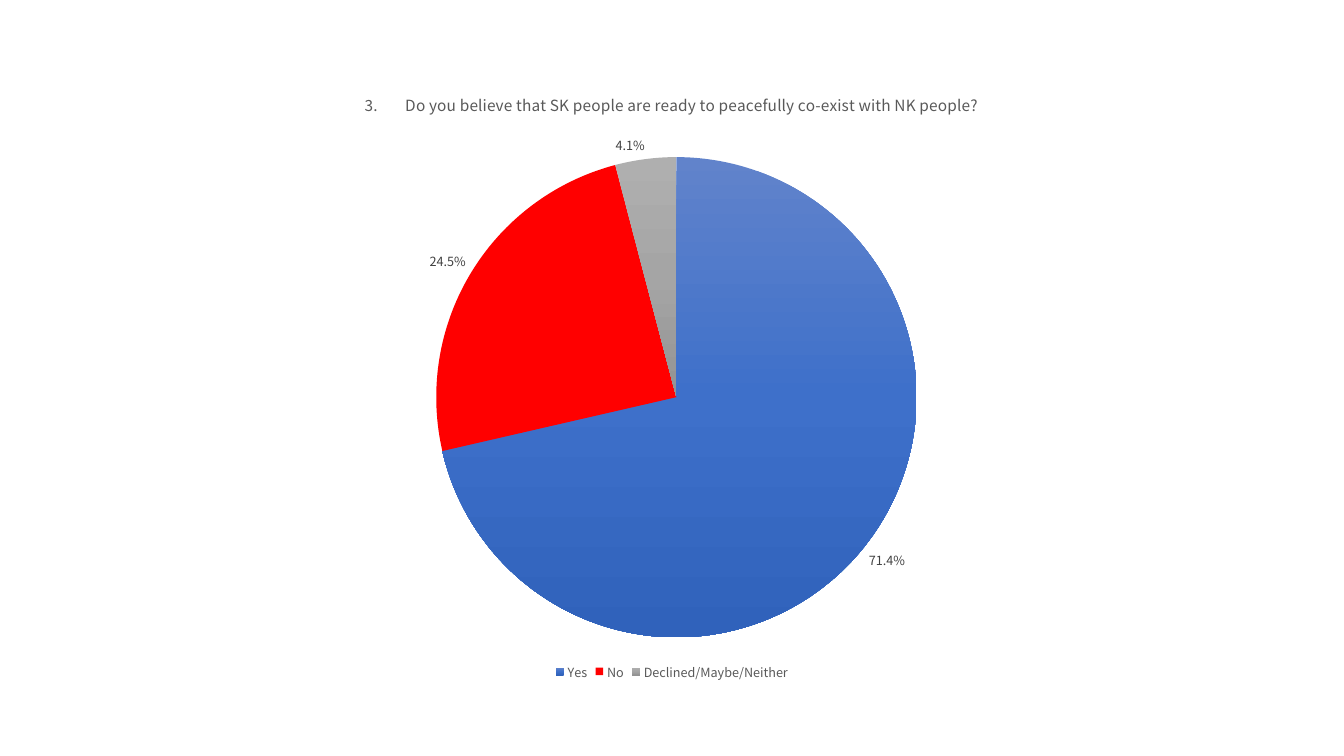
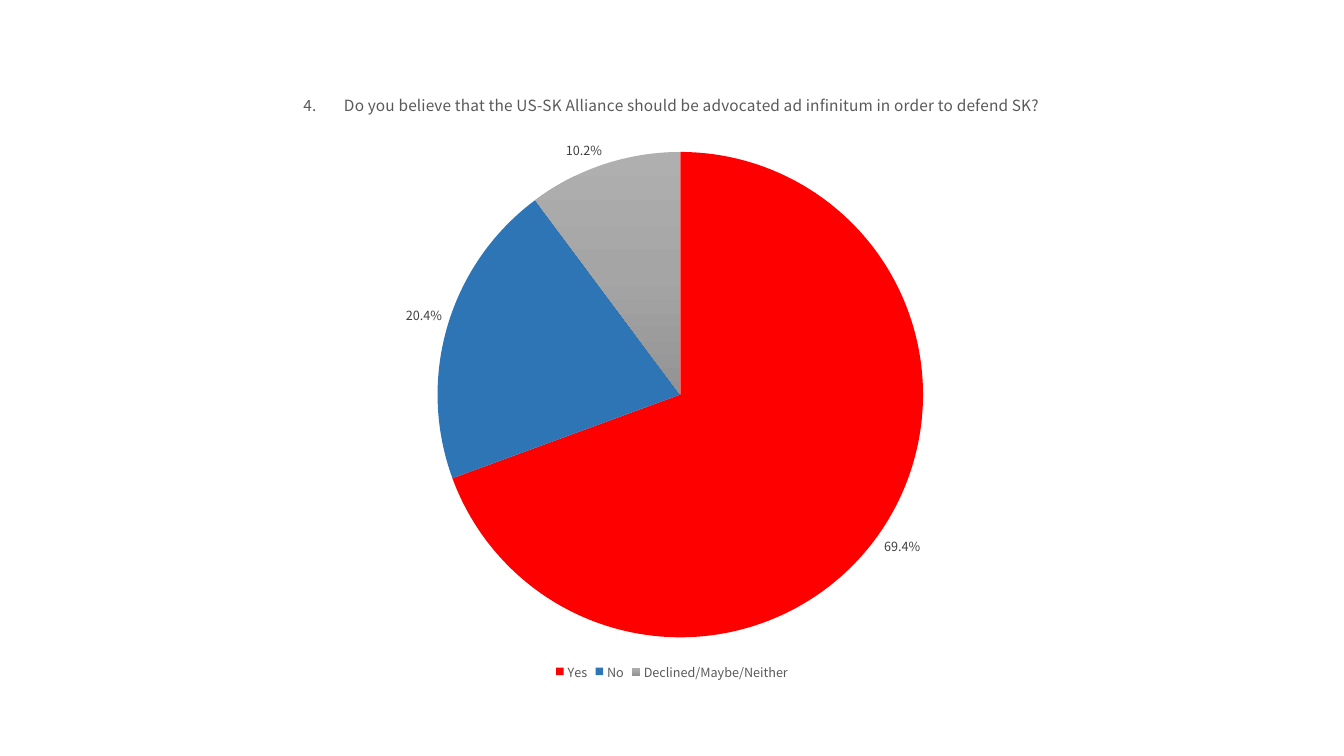
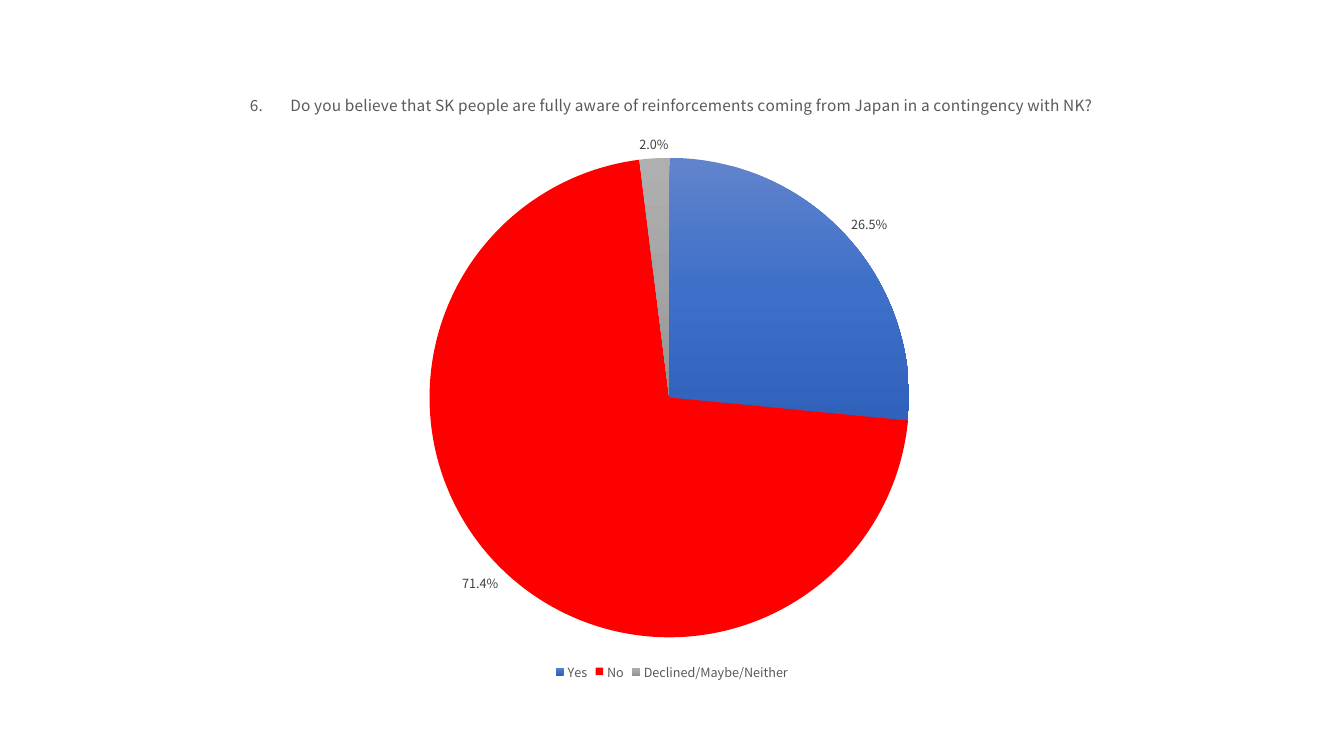
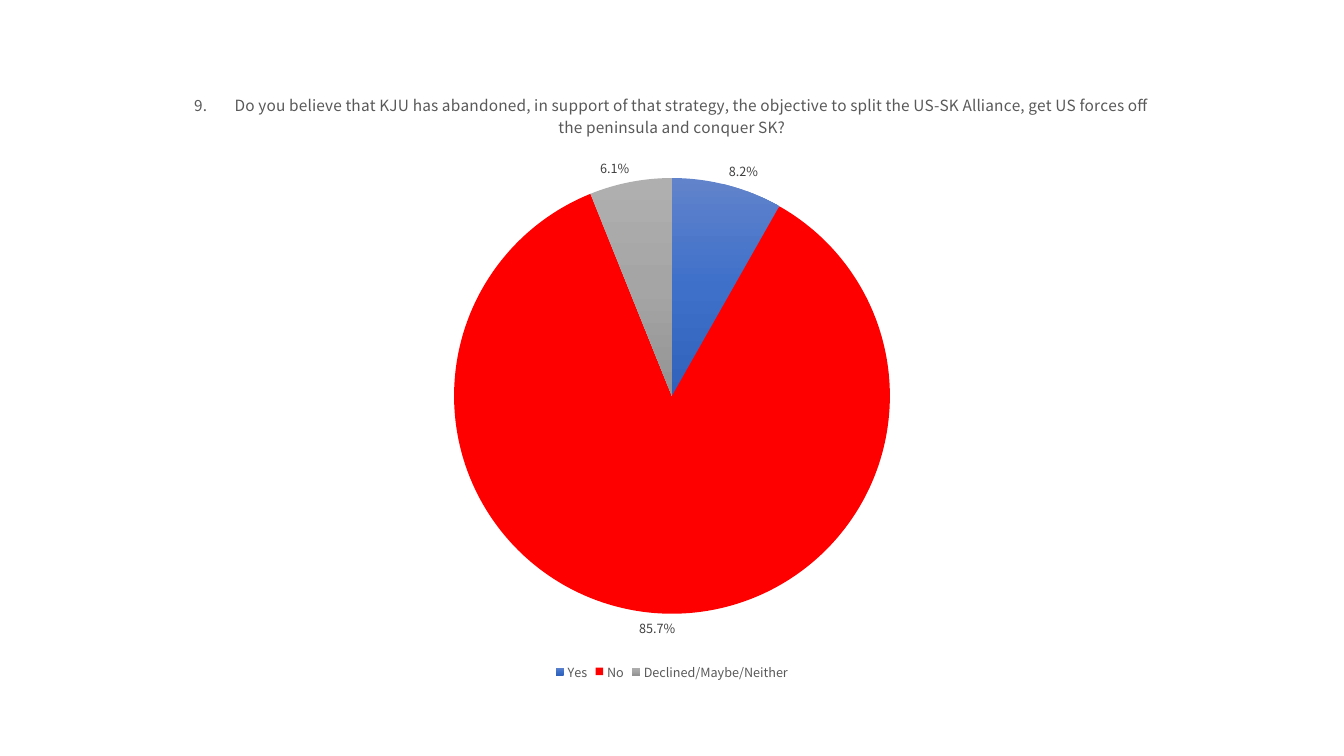
"""Builds four survey slides, each with one pie chart of the answers to a question."""
import copy
import dataclasses

import pptx
import pptx.chart.data
import pptx.dml.color
import pptx.enum.chart
import pptx.util

Inches = pptx.util.Inches
Pt = pptx.util.Pt


@dataclasses.dataclass(frozen=True)
class Theme:
    font: str = "Noto Sans CJK KR"
    title_size: float = 11
    base_size: float = 10
    small_size: float = 9
    number_gap: float = 17
    black: str = "000000"
    text: str = "595959"
    label: str = "404040"
    red: str = "FF0000"
    blue: str = "2E75B6"
    blue_fade: tuple = ("6183CB", "3E70CA", "3062BB")
    gray_fade: tuple = ("AFAFAF", "A5A5A5", "939393")


THEME = Theme()
ANSWERS = ("Yes", "No", "Declined/Maybe/Neither")
USUAL_FILLS = (THEME.blue_fade, THEME.red, THEME.gray_fade)
ALLIANCE_FILLS = (THEME.red, THEME.blue, THEME.gray_fade)

QUESTIONS = (
    (3, "Do you believe that SK people are ready to peacefully co-exist with NK people?",
     (0.714, 0.245, 0.041), USUAL_FILLS),
    (4, "Do you believe that the US-SK Alliance should be advocated ad infinitum in order to defend SK?",
     (0.694, 0.204, 0.102), ALLIANCE_FILLS),
    (6, "Do you believe that SK people are fully aware of reinforcements coming from Japan "
        "in a contingency with NK?",
     (0.265, 0.714, 0.02), USUAL_FILLS),
    (9, "Do you believe that KJU has abandoned, in support of that strategy, the objective to split "
        "the US-SK Alliance, get US forces off the peninsula and conquer SK?",
     (0.082, 0.857, 0.061), USUAL_FILLS),
)


def style_font(font, size, color):
    font.name = THEME.font
    font.size = Pt(size)
    font.bold = False
    font.color.rgb = pptx.dml.color.RGBColor.from_string(color)


def add_text(p, text, size=THEME.title_size, color=THEME.text, spacing=0):
    r = p.add_run()
    r.text = text
    style_font(r.font, size, color)
    if spacing:
        r.font._element.set("spc", str(int(spacing * 100)))


class Deck:
    def __init__(self, theme):
        self.theme = theme
        self.prs = pptx.Presentation()
        self.prs.slide_width = Inches(13.33)
        self.prs.slide_height = Inches(7.5)
        self.slide = None

    def add_slide(self):
        self.slide = self.prs.slides.add_slide(self.prs.slide_layouts[6])

    def add_pie(self, number, question, values, fills):
        data = pptx.chart.data.CategoryChartData(number_format="0.0%")
        data.categories = ANSWERS
        data.add_series(f"{number}. {question}", values)
        chart = self.slide.shapes.add_chart(
            pptx.enum.chart.XL_CHART_TYPE.PIE,
            Inches(0.7), Inches(0.7), Inches(11.93), Inches(6.09), data).chart
        style_font(chart.font, self.theme.base_size, self.theme.black)
        self.add_title(chart, number, question)
        self.add_legend(chart)
        self.add_labels(chart.plots[0])
        self.fill_slices(chart.plots[0].series[0], fills)

    def add_title(self, chart, number, question):
        chart.has_title = True
        chart.chart_title.include_in_layout = False
        p = chart.chart_title.text_frame.paragraphs[0]
        style_font(p.font, self.theme.title_size, self.theme.text)
        add_text(p, f"{number}.")
        add_text(p, " ", spacing=self.theme.number_gap)
        add_text(p, question)

    def add_legend(self, chart):
        chart.has_legend = True
        chart.legend.position = pptx.enum.chart.XL_LEGEND_POSITION.BOTTOM
        chart.legend.include_in_layout = False
        style_font(chart.legend.font, self.theme.small_size, self.theme.text)

    def add_labels(self, plot):
        plot.has_data_labels = True
        labels = plot.data_labels
        labels.show_value = True
        labels.show_percentage = False
        labels.number_format = "0.0%"
        labels.number_format_is_linked = False
        labels.position = pptx.enum.chart.XL_LABEL_POSITION.OUTSIDE_END
        style_font(labels.font, self.theme.small_size, self.theme.label)

    def fill_slices(self, series, fills):
        for i, color in enumerate(fills):
            fill = series.points[i].format.fill
            if isinstance(color, tuple):
                self.fade(series, fill, color)
            else:
                fill.solid()
                fill.fore_color.rgb = pptx.dml.color.RGBColor.from_string(color)

    def fade(self, series, fill, colors):
        fill.gradient()
        fill.gradient_angle = 270
        stops = series._element.xpath(".//a:gsLst")[-1]
        stops.insert(1, copy.deepcopy(stops[0]))
        for i, (stop, color) in enumerate(zip(fill.gradient_stops, colors)):
            stop.position = i / (len(colors) - 1)
            stop.color.rgb = pptx.dml.color.RGBColor.from_string(color)


def main():
    deck = Deck(THEME)
    for question in QUESTIONS:
        deck.add_slide()
        deck.add_pie(*question)
    deck.prs.save("out.pptx")


if __name__ == "__main__":
    main()
